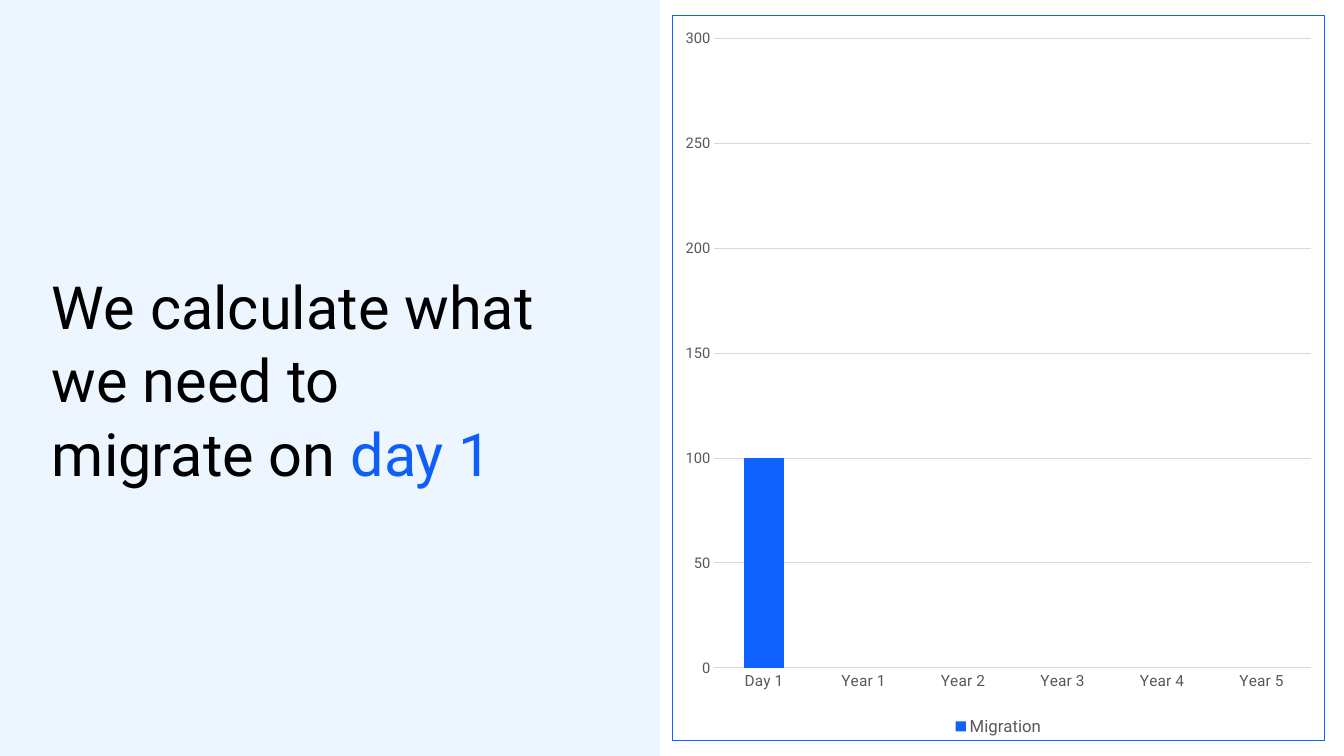
"""Build a slide with a headline panel and a column chart of the day 1 migration."""
from pptx import Presentation, util as u
from pptx.chart.data import CategoryChartData
from pptx.dml.color import RGBColor
from pptx.enum import chart as charts, shapes, text
from lxml import etree

PX = 914400 / 100.8
PANEL = RGBColor(0xED, 0xF6, 0xFF)
BLACK = RGBColor(0x00, 0x00, 0x00)
WHITE = RGBColor(0xFF, 0xFF, 0xFF)
ACCENT = RGBColor(0x0E, 0x5F, 0xFA)
BLUE = RGBColor(0x0F, 0x62, 0xFE)
GRAY = RGBColor(0x59, 0x59, 0x59)
GRID = RGBColor(0xD9, 0xD9, 0xD9)
FONT = "Roboto"


def px(*lengths):
    return [u.Emu(round(length * PX)) for length in lengths]


def add_run(paragraph, words, *, size, color):
    run = paragraph.add_run()
    run.text = words
    run.font.name = FONT
    run.font.size = u.Pt(size)
    run.font.color.rgb = color


presentation = Presentation()
presentation.slide_width, presentation.slide_height = px(1344, 756)
slide = presentation.slides.add_slide(presentation.slide_layouts[5])

panel = slide.shapes.add_shape(shapes.MSO_SHAPE.RECTANGLE, *px(0, 0, 660, 756))
panel.shadow.inherit = False
panel.fill.solid()
panel.fill.fore_color.rgb = PANEL
panel.line.fill.background()

title = slide.shapes.title
title.left, title.top, title.width, title.height = px(47, 223, 506, 310)
slide.shapes._spTree.append(title._element)
frame = title.text_frame
frame.word_wrap = True
frame.auto_size = text.MSO_AUTO_SIZE.NONE
frame.vertical_anchor = text.MSO_ANCHOR.MIDDLE
frame.margin_left, frame.margin_top, frame.margin_right, frame.margin_bottom = px(5, 5, 5, 5)
paragraph = frame.paragraphs[0]
paragraph.alignment = text.PP_ALIGN.LEFT
paragraph.line_spacing = 1.03
add_run(paragraph, "We calculate what we need to migrate on ", size=42.5, color=BLACK)
add_run(paragraph, "day 1", size=42.5, color=ACCENT)

data = CategoryChartData()
data.categories = ["Day 1"] + [f"Year {year}" for year in range(1, 6)]
data.add_series("Migration", [100] + [None] * 5)
chart = slide.shapes.add_chart(
    charts.XL_CHART_TYPE.COLUMN_STACKED, *px(672, 15, 653, 726), data
).chart
chart.has_title = False
chart.font.name = FONT
chart.font.size = u.Pt(10)
chart.font.color.rgb = BLACK

plot = chart.plots[0]
plot.gap_width = 150
plot.overlap = 100
plot.vary_by_categories = False
series_fill = plot.series[0].format.fill
series_fill.solid()
series_fill.fore_color.rgb = BLUE

category_axis, value_axis = chart.category_axis, chart.value_axis
value_axis.minimum_scale = 0
value_axis.maximum_scale = 300
value_axis.major_unit = 50
value_axis.has_major_gridlines = True
value_axis.format.line.fill.background()
for line in (category_axis.format.line, value_axis.major_gridlines.format.line):
    line.color.rgb = GRID
    line.width = u.Pt(0.75)
for axis in (category_axis, value_axis):
    axis.major_tick_mark = axis.minor_tick_mark = charts.XL_TICK_MARK.NONE

chart.has_legend = True
chart.legend.position = charts.XL_LEGEND_POSITION.BOTTOM
chart.legend.include_in_layout = False
for font, size in (
    (category_axis.tick_labels.font, 11),
    (value_axis.tick_labels.font, 10.5),
    (chart.legend.font, 12),
):
    font.name = FONT
    font.size = u.Pt(size)
    font.color.rgb = GRAY

frame_format = etree.fromstring(
    '<c:spPr xmlns:c="http://schemas.openxmlformats.org/drawingml/2006/chart"'
    ' xmlns:a="http://schemas.openxmlformats.org/drawingml/2006/main">'
    f'<a:solidFill><a:srgbClr val="{WHITE}"/></a:solidFill>'
    f'<a:ln w="{u.Pt(0.75)}"><a:solidFill><a:srgbClr val="{BLUE}"/></a:solidFill></a:ln>'
    "</c:spPr>"
)
chart._chartSpace.chart.addnext(frame_format)

presentation.save("out.pptx")
